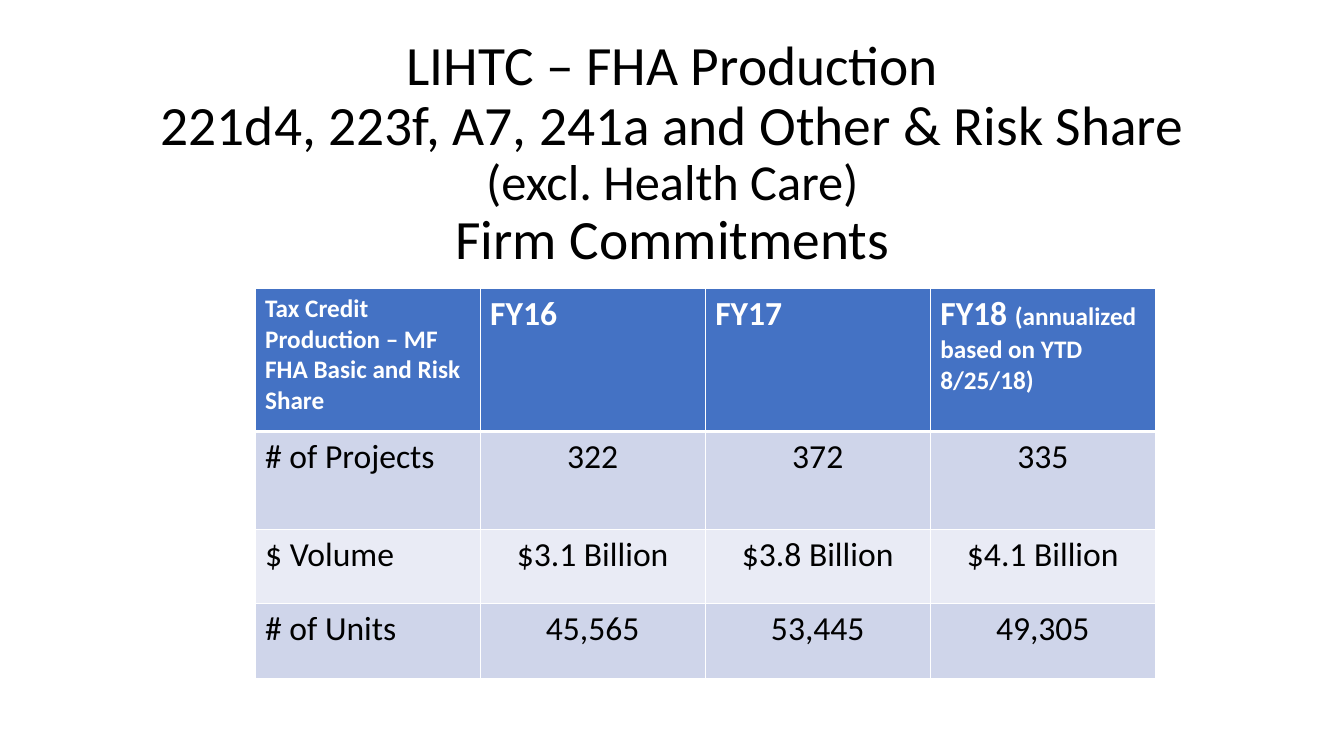
from dataclasses import dataclass

from lxml.etree import SubElement
from pptx import Presentation
from pptx.dml.color import RGBColor
from pptx.enum.text import MSO_ANCHOR, PP_ALIGN
from pptx.oxml.ns import qn
from pptx.util import Inches, Pt


@dataclass(frozen=True)
class Theme:
    font: str = "Calibri"
    text: str = "000000"
    white: str = "FFFFFF"
    header: str = "4472C4"
    bands: tuple = ("CFD5EA", "E9EBF5")
    title_size: float = 39.6
    subtitle_size: float = 36
    body_size: float = 24
    small_size: float = 18
    border: float = 1
    header_border: float = 3


theme = Theme()


def add_run(paragraph, text, size, color, bold=False):
    run = paragraph.add_run()
    run.text = text
    for name, value in {"name": theme.font, "size": Pt(size), "bold": bold}.items():
        setattr(run.font, name, value)
    run.font.color.rgb = RGBColor.from_string(color)


def add_border(cell, side, width):
    properties = cell._tc.get_or_add_tcPr()
    line = SubElement(properties, qn(f"a:ln{side}"), w=str(Pt(width)))
    fill = SubElement(line, qn("a:solidFill"))
    SubElement(fill, qn("a:srgbClr"), val=theme.white)


presentation = Presentation()
presentation.slide_width = Inches(13.33)
presentation.slide_height = Inches(7.5)
slide = presentation.slides.add_slide(presentation.slide_layouts[6])

# Title: the third line comes from wrapping
title = slide.shapes.add_textbox(Inches(0.92), Inches(0.4), Inches(11.5), Inches(2.27))
title.text_frame.word_wrap = True
title.text_frame.vertical_anchor = MSO_ANCHOR.MIDDLE
paragraph = title.text_frame.paragraphs[0]
paragraph.alignment = PP_ALIGN.CENTER
paragraph.line_spacing = 0.9
title_runs = [
    ("LIHTC – FHA Production", theme.title_size, True),
    ("221d4, 223f, A7, 241a and Other & Risk Share ", theme.title_size, False),
    ("(excl. Health Care)", theme.subtitle_size, True),
    ("Firm Commitments", theme.title_size, False),
]
for text, size, line_break in title_runs:
    add_run(paragraph, text, size, theme.text)
    if line_break:
        paragraph.add_line_break()

# Table contents
header = [
    [("Tax Credit Production – MF FHA Basic and Risk Share", theme.small_size)],
    [("FY16", theme.body_size)],
    [("FY17", theme.body_size)],
    [("FY18 ", theme.body_size), ("(annualized based on YTD 8/25/18)", theme.small_size)],
]
figures = [
    ["# of Projects", "322", "372", "335"],
    ["$ Volume", "$3.1 Billion", "$3.8 Billion", "$4.1 Billion"],
    ["# of Units", "45,565", "53,445", "49,305"],
]
rows = [header] + [[[(text, theme.body_size)] for text in row] for row in figures]
row_heights = [1.42, 0.97, 0.74, 0.74]

# Production table
table = slide.shapes.add_table(
    len(rows), len(header), Inches(2.53), Inches(2.86), Inches(8.93), Inches(sum(row_heights))
).table
for row, height in zip(table.rows, row_heights):
    row.height = Inches(height)

for row_index, row in enumerate(rows):
    is_header = row_index == 0
    background = theme.header if is_header else theme.bands[(row_index - 1) % 2]
    color = theme.white if is_header else theme.text
    widths = {
        "L": theme.border,
        "R": theme.border,
        "T": theme.header_border if row_index == 1 else theme.border,
        "B": theme.header_border if is_header else theme.border,
    }
    for column_index, runs in enumerate(row):
        cell = table.cell(row_index, column_index)
        for side, width in widths.items():
            add_border(cell, side, width)
        cell.fill.solid()
        cell.fill.fore_color.rgb = RGBColor.from_string(background)
        paragraph = cell.text_frame.paragraphs[0]
        centered = not is_header and column_index > 0
        paragraph.alignment = PP_ALIGN.CENTER if centered else PP_ALIGN.LEFT
        for text, size in runs:
            add_run(paragraph, text, size, color, bold=is_header)

presentation.save("out.pptx")
